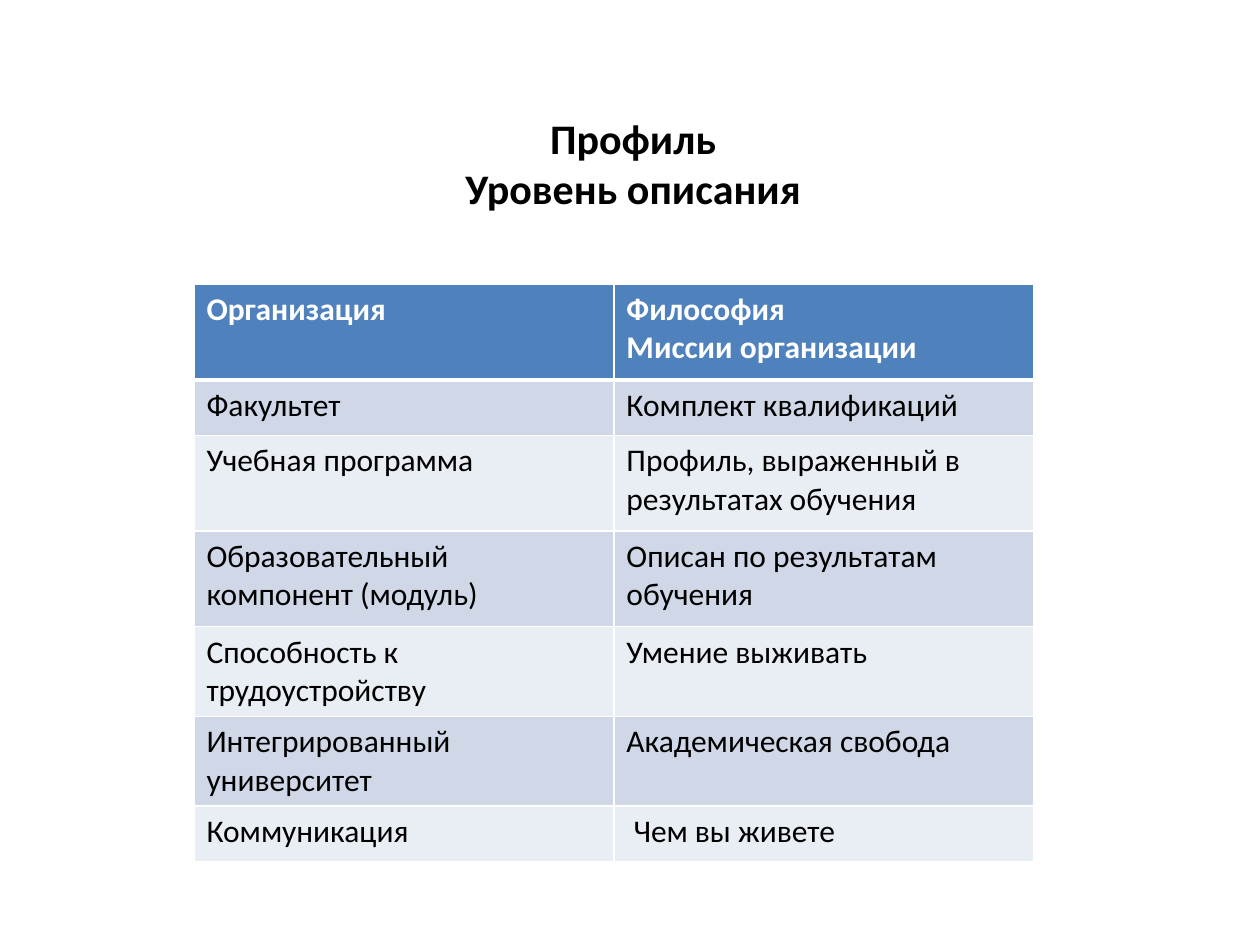
from lxml.etree import SubElement
from pptx import Presentation
from pptx.dml.color import RGBColor
from pptx.enum.text import MSO_ANCHOR as Anchor, MSO_AUTO_SIZE as AutoSize, PP_ALIGN as Align
from pptx.oxml.ns import qn
from pptx.util import Pt

FONT = "Calibri"
COLORS = {
    "header": "4F81BD",
    "odd": "D0D8E8",
    "even": "E9EDF4",
    "text": "000000",
    "light": "FFFFFF",
}
TITLE = "Профиль\nУровень описания"
LEVELS = [
    ("Организация", "Философия\nМиссии организации", 54.7),
    ("Факультет", "Комплект квалификаций", 31.7),
    ("Учебная программа", "Профиль, выраженный в результатах обучения", 54.7),
    ("Образовательный компонент (модуль)", "Описан по результатам обучения", 54.7),
    ("Способность к трудоустройству", "Умение выживать", 51.2),
    ("Интегрированный университет", "Академическая свобода", 51.2),
    ("Коммуникация", " Чем вы живете", 31.7),
]


def write_text(frame, text, size, color, bold, align):
    """Fill a text frame with evenly formatted paragraphs."""
    frame.text = text
    for paragraph in frame.paragraphs:
        paragraph.alignment = align
        font = paragraph.font
        font.name, font.size, font.bold = FONT, Pt(size), bold
        font.color.rgb = RGBColor.from_string(COLORS[color])


def add_title(slide):
    """Place and format the slide title."""
    title = slide.shapes.title
    title.left, title.top, title.width, title.height = Pt(257.8), Pt(60.5), Pt(208), Pt(65.5)
    frame = title.text_frame
    write_text(frame, TITLE, 24, "text", True, Align.CENTER)
    frame.word_wrap = False
    frame.auto_size = AutoSize.SHAPE_TO_FIT_TEXT
    frame.vertical_anchor = Anchor.TOP


def set_borders(cell, top, bottom):
    """Draw light borders around a cell, with the given top and bottom widths."""
    properties = cell._tc.get_or_add_tcPr()
    for side, width in (("L", 1), ("R", 1), ("T", top), ("B", bottom)):
        line = SubElement(properties, qn(f"a:ln{side}"), w=str(Pt(width)))
        fill = SubElement(line, qn("a:solidFill"))
        SubElement(fill, qn("a:srgbClr"), val=COLORS["light"])


def format_cell(cell, text, row):
    """Write and style one cell according to its row."""
    is_header = row == 0
    write_text(cell.text_frame, text, 18, "light" if is_header else "text", is_header, Align.LEFT)
    set_borders(cell, top=3 if row == 1 else 1, bottom=3 if is_header else 1)
    band = "header" if is_header else "odd" if row % 2 else "even"
    cell.fill.solid()
    cell.fill.fore_color.rgb = RGBColor.from_string(COLORS[band])


def add_levels_table(slide):
    """Add the table of description levels."""
    total_height = sum(height for *_, height in LEVELS)
    table = slide.shapes.add_table(
        len(LEVELS), 2, Pt(110.8), Pt(162.4), Pt(480), Pt(total_height)
    ).table
    for row, (level, description, height) in enumerate(LEVELS):
        table.rows[row].height = Pt(height)
        for column, text in enumerate((level, description)):
            format_cell(table.cell(row, column), text, row)


def main():
    """Build and save the slide."""
    presentation = Presentation()
    presentation.slide_width, presentation.slide_height = Pt(720), Pt(540)
    title_only = presentation.slide_layouts[5]
    slide = presentation.slides.add_slide(title_only)
    add_title(slide)
    add_levels_table(slide)
    presentation.save("out.pptx")


if __name__ == "__main__":
    main()
